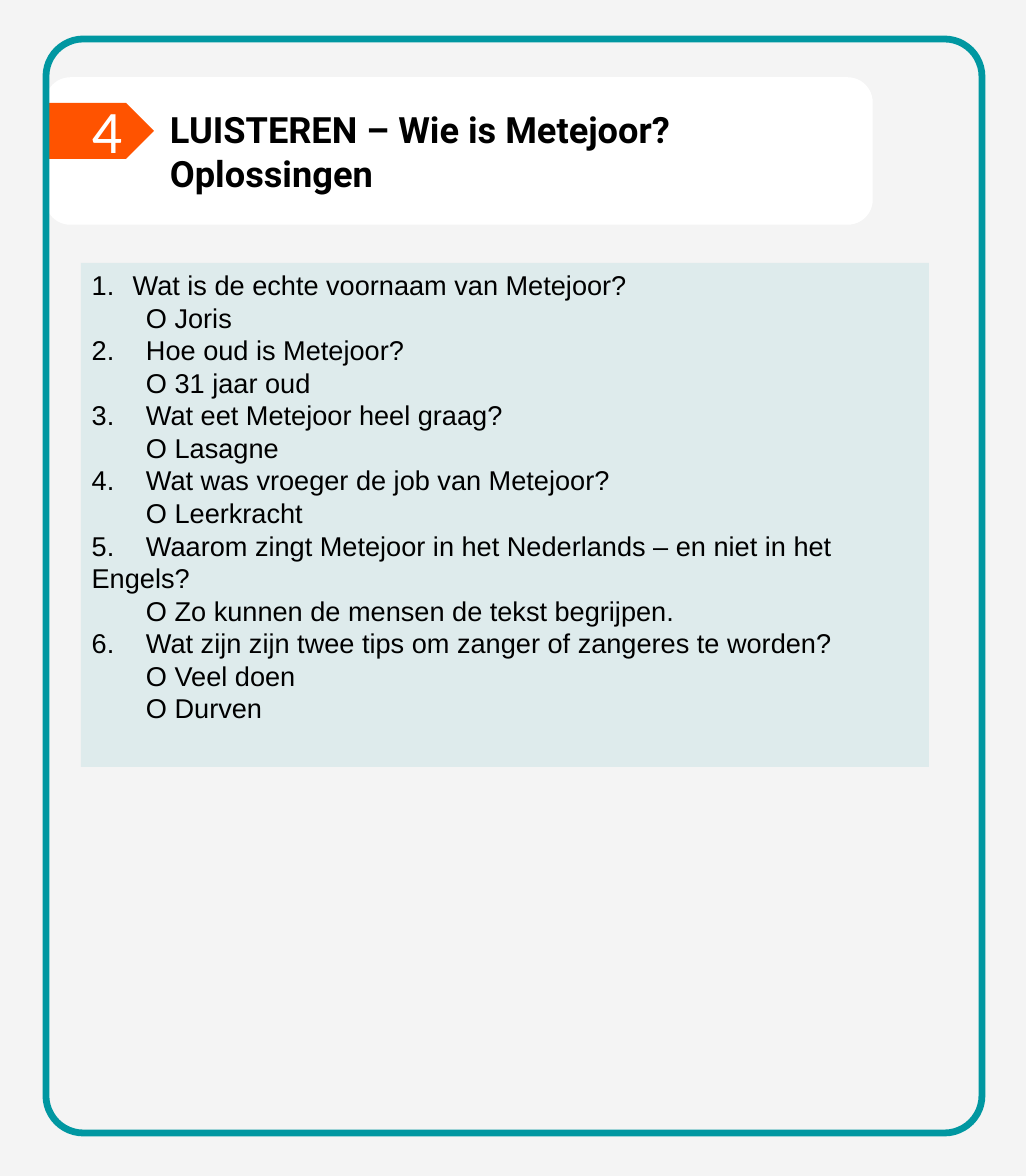
from pptx import Presentation
from pptx.dml.color import RGBColor as RGB
from pptx.enum.shapes import MSO_SHAPE as Kind
from pptx.enum.text import MSO_ANCHOR as Anchor, PP_ALIGN as Align
from pptx.oxml.xmlchemy import OxmlElement as Node
from pptx.util import Emu, Pt

PX = 8420  # EMU in one px
HEX = {"page": "F4F4F4", "white": "FFFFFF", "black": "000000",
       "teal": "0097A1", "pale": "DEEBEC", "orange": "FF5300"}
QUIZ = [
    ("Wat is de echte voornaam van Metejoor?", ["Joris"]),
    ("Hoe oud is Metejoor?", ["31 jaar oud"]),
    ("Wat eet Metejoor heel graag?", ["Lasagne"]),
    ("Wat was vroeger de job van Metejoor?", ["Leerkracht"]),
    ("Waarom zingt Metejoor in het Nederlands – en niet in het Engels?",
     ["Zo kunnen de mensen de tekst begrijpen."]),
    ("Wat zijn zijn twee tips om zanger of zangeres te worden?",
     ["Veel doen", "Durven"]),
]


def px(*nums):
    return [Emu(n * PX) for n in nums]


def tint(name):
    return RGB.from_string(HEX[name])


def add_box(slide, kind, box, fill=None, line=None, width=1):
    shape = slide.shapes.add_shape(kind, *px(*box))
    shape.shadow.inherit = False
    if fill:
        shape.fill.solid()
        shape.fill.fore_color.rgb = tint(fill)
    else:
        shape.fill.background()
    if line:
        shape.line.color.rgb = tint(line)
        shape.line.width = Pt(width)
    else:
        shape.line.fill.background()
    return shape


def set_text(shape, lines, face, size, color, bold=False):
    frame = shape.text_frame
    frame.word_wrap = True
    frame.vertical_anchor = Anchor.TOP
    frame.text = "\n".join(lines)
    for para in frame.paragraphs:
        para.alignment = Align.LEFT
        font = para.font
        font.name, font.size, font.bold = face, Pt(size), bold
        font.color.rgb = tint(color)


def add_count(para, indent):
    props = para._p.get_or_add_pPr()
    props.set("marL", str(indent * PX))
    props.set("indent", str(-indent * PX))
    mark = Node("a:buAutoNum")
    mark.set("type", "arabicPeriod")
    props.insert_element_before(mark, "a:tabLst", "a:defRPr", "a:extLst")


def quiz_lines():
    lines = []
    for num, (ask, answers) in enumerate(QUIZ, 1):
        # The first question is counted by its list mark
        lines.append(ask if num == 1 else f"{num}.\t{ask}")
        lines += [f"\tO {answer}" for answer in answers]
    return lines


def main():
    deck = Presentation()
    deck.slide_width, deck.slide_height = px(1026, 1176)
    slide = deck.slides.add_slide(deck.slide_layouts[5])
    slide.background.fill.solid()
    slide.background.fill.fore_color.rgb = tint("page")

    # Header card with number tag
    card = add_box(slide, Kind.ROUNDED_RECTANGLE, (46, 78, 826, 146),
                   "white", "white")
    tag = add_box(slide, Kind.PENTAGON, (46, 103, 108, 56), "orange")
    label = slide.shapes.add_textbox(*px(81, 88, 55, 84))
    set_text(label, ["4"], "Calibri", 40, "white")

    # Title, placed above the card
    title = slide.shapes.title
    title.left, title.top, title.width, title.height = px(159, 102, 715, 99)
    set_text(title, ["LUISTEREN – Wie is Metejoor?", "Oplossingen"],
             "Roboto", 24, "black", True)
    tag.element.addnext(title.element)

    # Page frame
    frame = add_box(slide, Kind.ROUNDED_RECTANGLE, (46, 39, 936, 1094),
                    line="teal", width=4.5)
    frame.adjustments[0] = 0.04

    # Questions and answers
    panel = add_box(slide, Kind.RECTANGLE, (81, 263, 848, 504), "pale")
    set_text(panel, quiz_lines(), "Arial", 18, "black")
    add_count(panel.text_frame.paragraphs[0], 41)

    deck.save("out.pptx")


if __name__ == "__main__":
    main()
